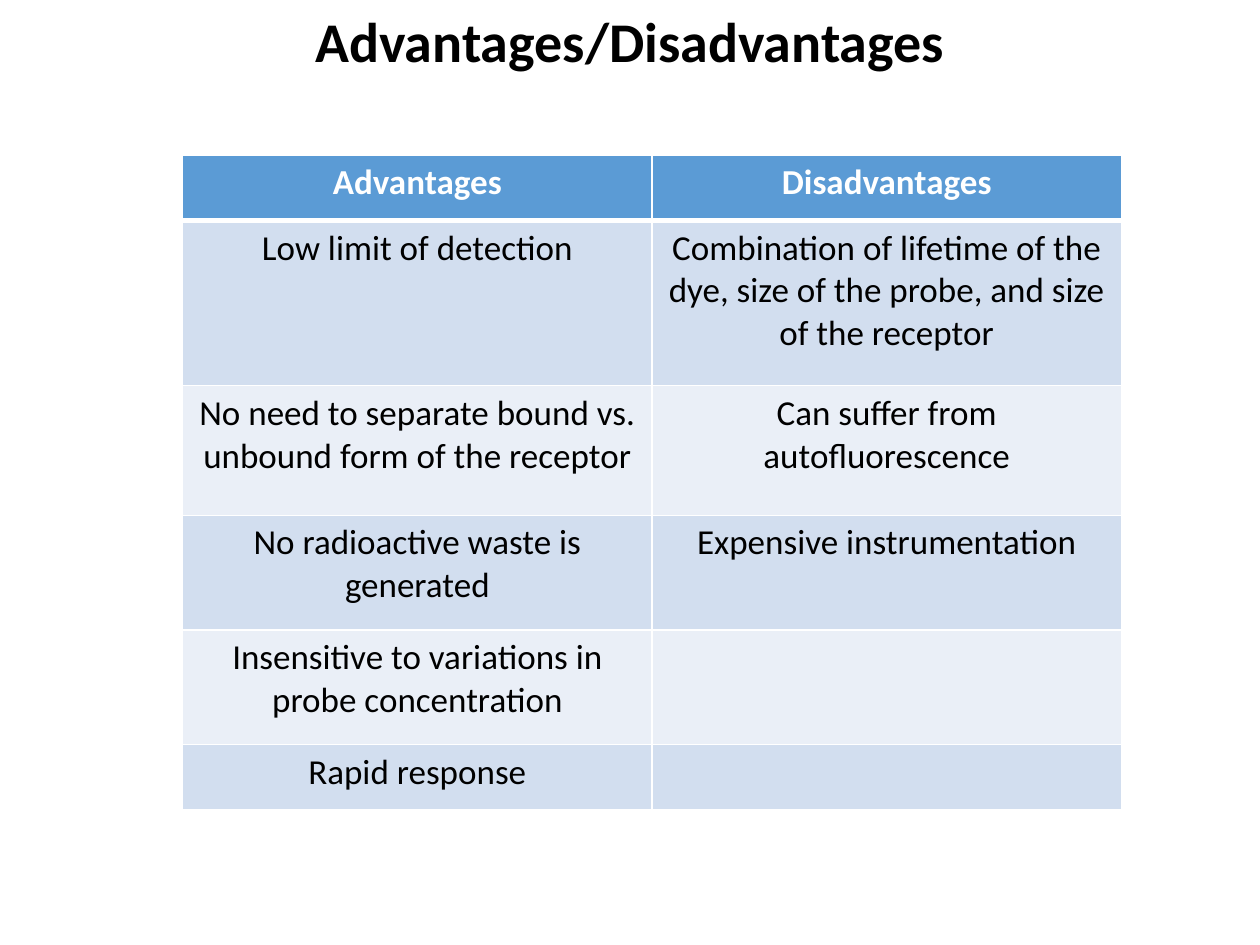
from lxml import etree
from pptx import Presentation
from pptx.dml.color import RGBColor
from pptx.enum.text import MSO_ANCHOR, PP_ALIGN
from pptx.oxml.ns import qn
from pptx.util import Inches, Pt

CENTER, TOP = PP_ALIGN.CENTER, MSO_ANCHOR.TOP
TITLE_ONLY = 5

# Content
TITLE = "Advantages/Disadvantages"
ROWS = [
    ("Advantages", "Disadvantages"),
    ("Low limit of detection",
     "Combination of lifetime of the dye, size of the probe, and size of the receptor"),
    ("No need to separate bound vs. unbound form of the receptor",
     "Can suffer from autofluorescence"),
    ("No radioactive waste is generated", "Expensive instrumentation"),
    ("Insensitive to variations in probe concentration", ""),
    ("Rapid response", ""),
]

# Layout and colours
SLIDE_W, SLIDE_H = 10, 7.5
TITLE_H = 0.64
TABLE_LEFT, TABLE_TOP, TABLE_W = 1.45, 1.23, 7.45
ROW_HEIGHTS = [0.52, 1.31, 1.03, 0.91, 0.91, 0.52]
FONT = "Calibri"
BLACK, WHITE = "000000", "FFFFFF"
HEADER_FILL, BANDS = "5B9BD5", ("D2DEEF", "EAEFF7")


def rgb(value):
    return RGBColor.from_string(value)


def write(tf, text, size=20, color=BLACK, bold=False):
    p = tf.paragraphs[0]
    p.alignment = CENTER
    p.font.size = Pt(size)
    if text:
        r = p.add_run()
        r.text = text
        r.font.name, r.font.size, r.font.bold = FONT, Pt(size), bold
        r.font.color.rgb = rgb(color)


def set_borders(cell, top, bottom):
    tc_pr = cell._tc.get_or_add_tcPr()
    sides = [("lnL", 1), ("lnR", 1), ("lnT", top), ("lnB", bottom)]
    for i, (side, width) in enumerate(sides):
        ln = etree.Element(qn(f"a:{side}"), w=str(Pt(width)))
        fill = etree.SubElement(ln, qn("a:solidFill"))
        etree.SubElement(fill, qn("a:srgbClr"), val=WHITE)
        tc_pr.insert(i, ln)


prs = Presentation()
prs.slide_width, prs.slide_height = Inches(SLIDE_W), Inches(SLIDE_H)
s = prs.slides.add_slide(prs.slide_layouts[TITLE_ONLY])

# Title
title = s.shapes.title
title.left, title.top = 0, 0
title.width, title.height = prs.slide_width, Inches(TITLE_H)
title.text_frame.vertical_anchor = TOP
write(title.text_frame, TITLE, size=32, bold=True)

# Comparison table
table = s.shapes.add_table(
    len(ROWS), len(ROWS[0]), Inches(TABLE_LEFT), Inches(TABLE_TOP),
    Inches(TABLE_W), Inches(sum(ROW_HEIGHTS))).table
for i, (texts, height) in enumerate(zip(ROWS, ROW_HEIGHTS)):
    table.rows[i].height = Inches(height)
    header = i == 0
    for j, text in enumerate(texts):
        cell = table.cell(i, j)
        cell.fill.solid()
        cell.fill.fore_color.rgb = rgb(HEADER_FILL if header else BANDS[(i - 1) % 2])
        set_borders(cell, top=3 if i == 1 else 1, bottom=3 if header else 1)
        write(cell.text_frame, text, color=WHITE if header else BLACK, bold=header)

prs.save("out.pptx")
